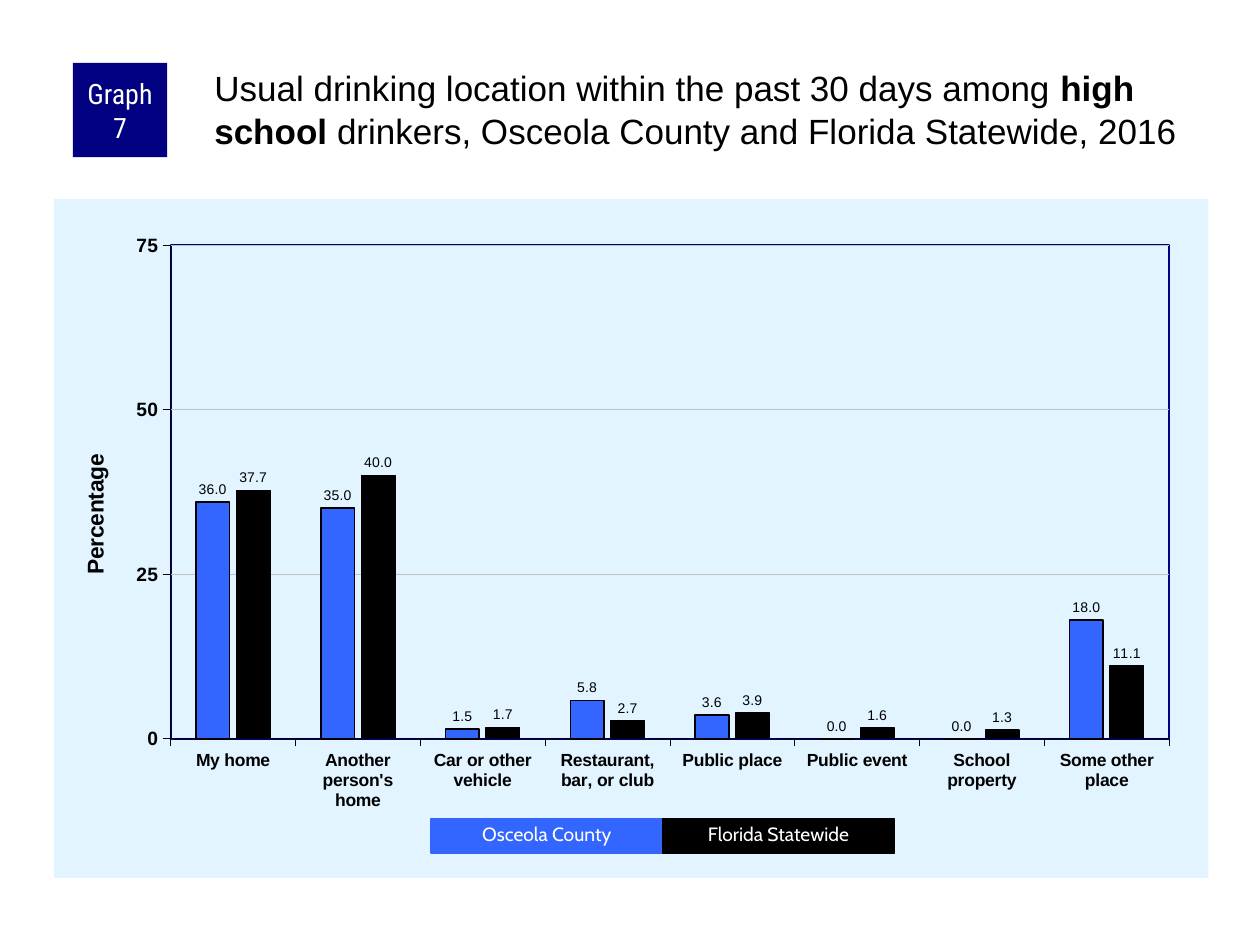
"""Build the slide on usual drinking locations of high school drinkers."""
from dataclasses import dataclass

from lxml import etree
from pptx import Presentation
from pptx.chart.data import CategoryChartData
from pptx.dml.color import RGBColor
from pptx.enum.chart import XL_CHART_TYPE as ChartType, XL_LABEL_POSITION as LabelPosition
from pptx.enum.chart import XL_TICK_MARK as TickMark
from pptx.enum.shapes import MSO_SHAPE as Shape
from pptx.enum.text import MSO_ANCHOR as Anchor, MSO_AUTO_SIZE as AutoSize, PP_ALIGN as Align
from pptx.oxml import parse_xml
from pptx.oxml.ns import nsdecls, qn
from pptx.util import Cm, Pt


@dataclass(frozen=True)
class Theme:
    black: RGBColor = RGBColor(0, 0, 0)
    white: RGBColor = RGBColor(255, 255, 255)
    navy: RGBColor = RGBColor(0, 0, 128)
    blue: RGBColor = RGBColor(0x33, 0x66, 0xFF)
    panel: RGBColor = RGBColor(0xE1, 0xF4, 0xFF)
    grid: RGBColor = RGBColor(0xC0, 0xC0, 0xC0)
    body_font: str = "Arial"
    badge_font: str = "Roboto Condensed"
    key_font: str = "Cabin"
    title_size: float = 20
    badge_size: float = 16
    axis_title_size: float = 13
    chart_size: float = 11.5
    value_size: float = 11
    category_size: float = 10
    label_size: float = 8
    key_size: float = 11


def style_font(font, name, size, color, bold=False):
    font.name, font.size, font.bold = name, Pt(size), bold
    font.color.rgb = color


def set_layout(parent, index, **settings):
    for old in parent.findall(qn("c:layout")):
        parent.remove(old)
    layout = etree.Element(qn("c:layout"))
    manual = etree.SubElement(layout, qn("c:manualLayout"))
    for tag, value in settings.items():
        etree.SubElement(manual, qn(f"c:{tag}")).set("val", str(value))
    parent.insert(index, layout)


theme = Theme()
presentation = Presentation()
presentation.slide_width, presentation.slide_height = Cm(25.4), Cm(19.05)
slide = presentation.slides.add_slide(presentation.slide_layouts[5])

locations = ["My home", "Another person's home", "Car or other vehicle",
             "Restaurant, bar, or club", "Public place", "Public event",
             "School property", "Some other place"]
regions = [
    ("Osceola County", theme.blue, 1, "0.0", [36, 35, 1.5, 5.8, 3.6, 0, 0, 18]),
    ("Florida Statewide", theme.black, 0.75, "#,##0.0",
     [37.7, 40, 1.7, 2.7, 3.9, 1.6, 1.3, 11.1]),
]
drinking = CategoryChartData()
drinking.categories = locations
for region, color, outline, number_format, shares in regions:
    drinking.add_series(region, shares, number_format)
chart = slide.shapes.add_chart(ChartType.COLUMN_CLUSTERED, Cm(1.09), Cm(4.01),
                               Cm(23.27), Cm(13.69), drinking).chart
chart.has_legend = chart.has_title = False
style_font(chart.font, theme.body_font, theme.chart_size, theme.black)

columns = chart.plots[0]
columns.gap_width, columns.overlap, columns.vary_by_categories = 150, -20, False
for series, (region, color, outline, number_format, shares) in zip(columns.series, regions):
    series.format.fill.solid()
    series.format.fill.fore_color.rgb = color
    series.format.line.color.rgb = theme.black
    series.format.line.width = Pt(outline)
    labels = series.data_labels
    labels.show_value = True
    labels.position = LabelPosition.OUTSIDE_END
    labels.number_format, labels.number_format_is_linked = number_format, False
    style_font(labels.font, theme.body_font, theme.label_size, theme.black)

place_axis, share_axis = chart.category_axis, chart.value_axis
for axis, size in ((place_axis, theme.category_size), (share_axis, theme.value_size)):
    axis.major_tick_mark, axis.minor_tick_mark = TickMark.OUTSIDE, TickMark.NONE
    axis.format.line.color.rgb = theme.black
    axis.format.line.width = Pt(0.25)
    style_font(axis.tick_labels.font, theme.body_font, size, theme.black, True)
share_axis.minimum_scale, share_axis.maximum_scale, share_axis.major_unit = 0, 75, 25
share_axis.tick_labels.number_format = "0"
share_axis.tick_labels.number_format_is_linked = False
gridlines = share_axis.major_gridlines.format.line
gridlines.color.rgb, gridlines.width = theme.grid, Pt(0.25)

percentage = share_axis.axis_title
percentage.text_frame.text = "Percentage"
style_font(percentage.text_frame.paragraphs[0].runs[0].font, theme.body_font,
           theme.axis_title_size, theme.black, True)
turned = percentage._element.find(".//" + qn("a:bodyPr"))
turned.set("rot", "-5400000")
turned.set("vert", "horz")
set_layout(percentage._element, 1, xMode="edge", yMode="edge", x=0.02, y=0.37)

chart_space = chart._chartSpace
plot_area = chart_space.find(".//" + qn("c:plotArea"))
set_layout(plot_area, 0, layoutTarget="inner", xMode="edge", yMode="edge",
           x=0.101, y=0.068, w=0.865, h=0.727)
plot_area.append(parse_xml(
    f'<c:spPr {nsdecls("c", "a")}><a:noFill/><a:ln w="12700"><a:solidFill>'
    f'<a:srgbClr val="{theme.navy}"/></a:solidFill></a:ln></c:spPr>'))
chart_space.find(qn("c:chart")).addnext(parse_xml(
    f'<c:spPr {nsdecls("c", "a")}><a:solidFill><a:srgbClr val="{theme.panel}"/>'
    '</a:solidFill><a:ln><a:noFill/></a:ln></c:spPr>'))

badge = slide.shapes.add_shape(Shape.RECTANGLE, Cm(1.47), Cm(1.27), Cm(1.9), Cm(1.9))
badge.shadow.inherit = False
badge.fill.solid()
badge.fill.fore_color.rgb = theme.navy
badge.line.fill.background()
badge_text = badge.text_frame
badge_text.text = "Graph 7"
badge_text.word_wrap, badge_text.vertical_anchor = True, Anchor.MIDDLE
badge_text.margin_left = badge_text.margin_right = Cm(0.13)
badge_text.margin_top = badge_text.margin_bottom = 0
badge_text.paragraphs[0].alignment = Align.CENTER
style_font(badge_text.paragraphs[0].runs[0].font, theme.badge_font,
           theme.badge_size, theme.white)

title = slide.shapes.title
title.left, title.top, title.width, title.height = Cm(4.24), Cm(1.27), Cm(20.12), Cm(2.11)
heading = title.text_frame
heading.word_wrap, heading.auto_size = True, AutoSize.NONE
heading.vertical_anchor = Anchor.TOP
heading.margin_left = heading.margin_top = Cm(0.08)
heading.margin_right = heading.margin_bottom = 0
heading.paragraphs[0].alignment = Align.LEFT
for words, bold in (("Usual drinking location within the past 30 days among ", False),
                    ("high school", True),
                    (" drinkers, Osceola County and Florida Statewide, 2016", False)):
    phrase = heading.paragraphs[0].add_run()
    phrase.text = words
    style_font(phrase.font, theme.body_font, theme.title_size, theme.black, bold)

key_width = 4.67
for position, (region, color, *_) in enumerate(regions):
    key = slide.shapes.add_shape(Shape.RECTANGLE, Cm(8.69 + position * key_width),
                                 Cm(16.51), Cm(key_width), Cm(0.69))
    key.shadow.inherit = False
    key.fill.solid()
    key.fill.fore_color.rgb = key.line.color.rgb = color
    key.line.width = Pt(0.75)
    key_text = key.text_frame
    key_text.text = region
    key_text.word_wrap, key_text.auto_size = True, AutoSize.SHAPE_TO_FIT_TEXT
    key_text.vertical_anchor = Anchor.TOP
    key_text.paragraphs[0].alignment = Align.CENTER
    key_text.paragraphs[0].line_spacing = 0.9
    style_font(key_text.paragraphs[0].runs[0].font, theme.key_font,
               theme.key_size, theme.white)

presentation.save("out.pptx")
